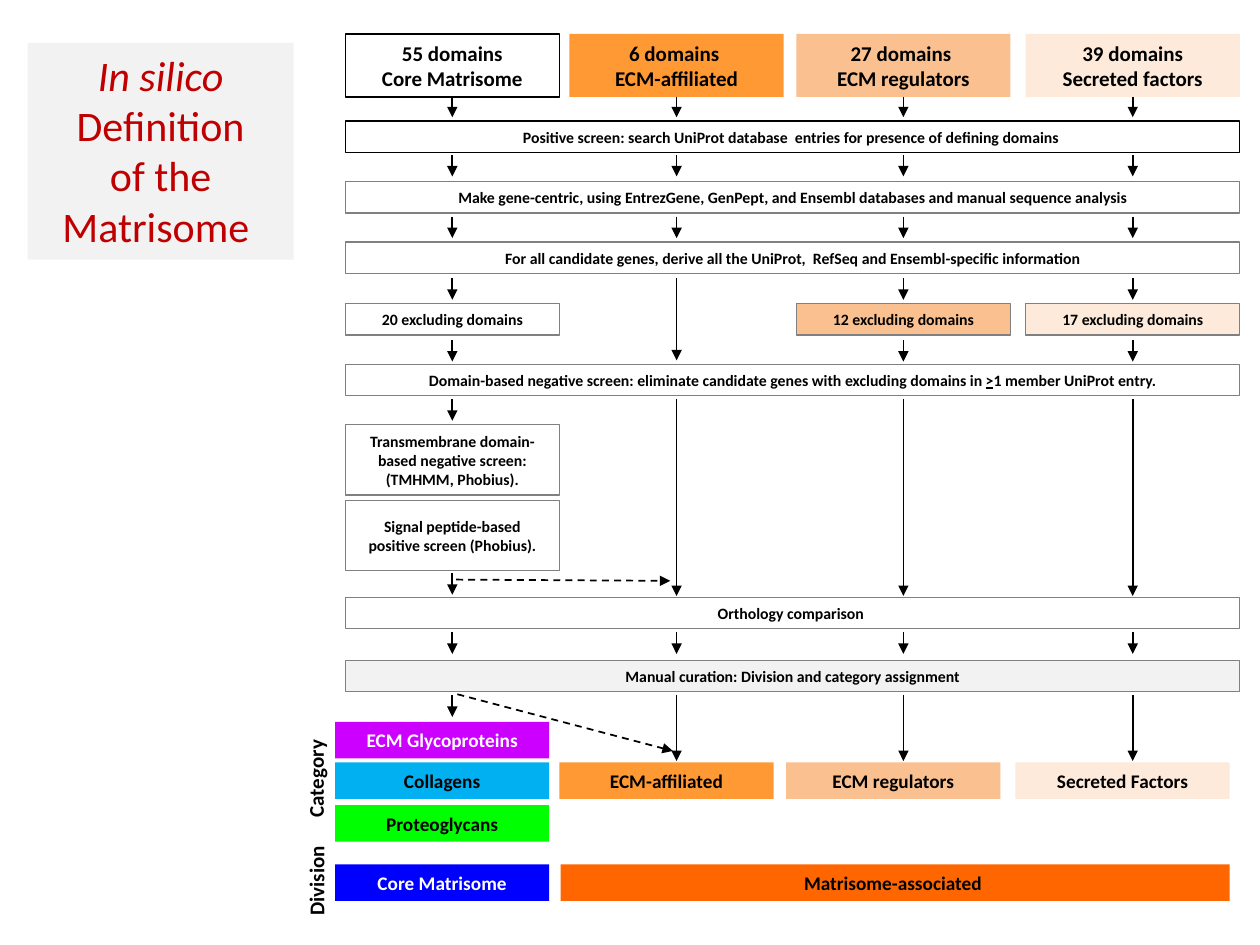
"""Build the flowchart slide that defines the matrisome in silico."""
import pptx
import pptx.dml.color
import pptx.enum.dml
import pptx.enum.shapes
import pptx.enum.text
import pptx.oxml.ns
import pptx.util
from lxml import etree
from pptx.util import Inches

COLORS = {
    "black": "000000", "white": "FFFFFF", "gray": "808080", "pale": "F2F2F2",
    "red": "C00000", "orange": "FF9933", "peach": "FAC090", "cream": "FDEADA",
    "deep orange": "FF6600", "blue": "0000FF", "purple": "CC00FF",
    "sky": "00B0F0", "green": "00FF00",
}
FONT = "Calibri"
COLUMNS = [2.74, 4.52, 6.32, 8.14]
COLUMN_WIDTH = 1.7
CENTERS = [left + COLUMN_WIDTH / 2 for left in COLUMNS]
FULL_WIDTH = 7.1
BAR_HEIGHT = 0.25
OUTCOME_LEFTS = [2.66, 4.44, 6.24, 8.06]
OUTCOME_HEIGHT = 0.29
SHORT_ARROW = 0.17

HEADERS = [
    ("55 domains\nCore Matrisome", "white", "black"),
    ("6 domains \nECM-affiliated", "orange", None),
    ("27 domains \nECM regulators", "peach", None),
    ("39 domains\nSecreted factors", "cream", None),
]
STEPS = [
    (0.96, "Positive screen: search UniProt database  entries for presence of defining domains ", "white", "black"),
    (1.44, "Make gene-centric, using EntrezGene, GenPept, and Ensembl databases and manual sequence analysis", "white", "gray"),
    (1.92, "For all candidate genes, derive all the UniProt,  RefSeq and Ensembl-specific information", "white", "gray"),
    (4.74, "Orthology comparison ", "white", "gray"),
    (5.24, "Manual curation: Division and category assignment", "pale", "gray"),
]
NEGATIVE_SCREEN = [
    "Domain-based negative screen: eliminate candidate genes with excluding domains in ",
    ">", "1 member UniProt entry.",
]
EXCLUSIONS = [(0, "20", "white"), (2, "12", "peach"), (3, "17", "cream")]
CORE_SCREENS = [
    (3.37, "Transmembrane domain-based negative screen: (TMHMM, Phobius)."),
    (3.97, "Signal peptide-based positive screen (Phobius)."),
]
OUTCOMES = [
    (0, 5.73, "ECM Glycoproteins", "purple", "white"),
    (0, 6.05, "Collagens", "sky", "black"),
    (0, 6.39, "Proteoglycans", "green", "black"),
    (1, 6.05, "ECM-affiliated", "orange", "black"),
    (2, 6.05, "ECM regulators", "peach", "black"),
    (3, 6.05, "Secreted Factors", "cream", "black"),
    (0, 6.86, "Core Matrisome", "blue", "white"),
]
SHORT_ARROWS = [
    (1.23, [0, 1, 2, 3]), (1.72, [0, 1, 2, 3]), (2.21, [0, 2, 3]),
    (2.7, [0, 2, 3]), (3.17, [0]), (4.55, [0]),
    (5.02, [0, 1, 2, 3]), (5.52, [0]),
]
LONG_ARROWS = [(2.21, 2.86, [1]), (3.17, 4.73, [1, 2, 3]), (5.52, 6.04, [1, 2, 3])]


def color(name):
    """Return the named colour."""
    return pptx.dml.color.RGBColor.from_string(COLORS[name])


def format_text(text_frame, size, font_color="black", bold=True):
    """Centre every paragraph and format its runs."""
    text_frame.word_wrap = True
    for paragraph in text_frame.paragraphs:
        paragraph.alignment = pptx.enum.text.PP_ALIGN.CENTER
        for run in paragraph.runs:
            run.font.name = FONT
            run.font.size = pptx.util.Pt(size)
            run.font.bold = bold
            run.font.color.rgb = color(font_color)


def add_box(slide, left, top, width, height, text, fill, line=None, size=9, font_color="black"):
    """Add a filled rectangle with centred bold text."""
    shape = slide.shapes.add_shape(
        pptx.enum.shapes.MSO_SHAPE.RECTANGLE,
        Inches(left), Inches(top), Inches(width), Inches(height))
    shape.shadow.inherit = False
    shape.fill.solid()
    shape.fill.fore_color.rgb = color(fill)
    if line:
        shape.line.color.rgb = color(line)
        shape.line.width = pptx.util.Pt(0.75)
    else:
        shape.line.fill.background()
    shape.text_frame.text = text
    shape.text_frame.vertical_anchor = pptx.enum.text.MSO_ANCHOR.MIDDLE
    format_text(shape.text_frame, size, font_color)
    return shape


def add_arrow(slide, start, end, dashed=False):
    """Add a straight arrow between two points."""
    connector = slide.shapes.add_connector(
        pptx.enum.shapes.MSO_CONNECTOR.STRAIGHT,
        *[Inches(value) for value in (*start, *end)])
    connector.line.color.rgb = color("black")
    connector.line.width = pptx.util.Pt(1)
    if dashed:
        connector.line.dash_style = pptx.enum.dml.MSO_LINE.DASH
    line = connector.line._get_or_add_ln()
    etree.SubElement(line, pptx.oxml.ns.qn("a:tailEnd"), type="triangle")
    etree.SubElement(connector._element.spPr, pptx.oxml.ns.qn("a:effectLst"))
    return connector


def add_side_label(slide, left, top, width, text):
    """Add a row label that reads upwards."""
    label = slide.shapes.add_textbox(Inches(left), Inches(top), Inches(width), Inches(0.3))
    label.rotation = 270
    label.text_frame.text = text
    format_text(label.text_frame, 12)
    label.text_frame.word_wrap = False


def format_title(slide):
    """Place and format the slide title."""
    title = slide.shapes.title
    title.left, title.top = Inches(0.22), Inches(0.34)
    title.width, title.height = Inches(2.11), Inches(1.72)
    title.fill.solid()
    title.fill.fore_color.rgb = color("pale")
    text_frame = title.text_frame
    text_frame.text = "In silico\nDefinition\nof the\nMatrisome "
    text_frame.auto_size = pptx.enum.text.MSO_AUTO_SIZE.NONE
    text_frame.vertical_anchor = pptx.enum.text.MSO_ANCHOR.TOP
    format_text(text_frame, 24, "red", bold=False)
    text_frame.paragraphs[0].runs[0].font.italic = True


def add_negative_screen(slide):
    """Add the screen step whose comparison sign is underlined."""
    shape = add_box(slide, COLUMNS[0], 2.89, FULL_WIDTH, BAR_HEIGHT, "", "white", "gray")
    paragraph = shape.text_frame.paragraphs[0]
    for text in NEGATIVE_SCREEN:
        run = paragraph.add_run()
        run.text = text
        run.font.underline = text == ">"
    format_text(shape.text_frame, 9)


def add_boxes(slide):
    """Add the screening steps and the resulting categories."""
    for top, text, fill, line in STEPS:
        add_box(slide, COLUMNS[0], top, FULL_WIDTH, BAR_HEIGHT, text, fill, line)
    add_negative_screen(slide)
    for column, count, fill in EXCLUSIONS:
        add_box(slide, COLUMNS[column], 2.41, COLUMN_WIDTH, BAR_HEIGHT,
                f"{count} excluding domains", fill, "gray")
    for top, text in CORE_SCREENS:
        add_box(slide, COLUMNS[0], top, COLUMN_WIDTH, 0.56, text, "white", "gray")
    for column, top, text, fill, font_color in OUTCOMES:
        add_box(slide, OUTCOME_LEFTS[column], top, COLUMN_WIDTH, OUTCOME_HEIGHT,
                text, fill, size=11, font_color=font_color)
    add_box(slide, 4.45, 6.86, 5.31, OUTCOME_HEIGHT, "Matrisome-associated ", "deep orange", size=11)


def add_arrows(slide):
    """Add the arrows that lead from step to step."""
    short = [(top, top + SHORT_ARROW, columns) for top, columns in SHORT_ARROWS]
    for top, bottom, columns in short + LONG_ARROWS:
        for column in columns:
            add_arrow(slide, (CENTERS[column], top), (CENTERS[column], bottom))
    add_arrow(slide, (3.62, 4.6), (5.32, 4.61), dashed=True)
    add_arrow(slide, (3.63, 5.51), (5.34, 5.96), dashed=True)


def main():
    """Build and save the presentation."""
    presentation = pptx.Presentation()
    presentation.slide_width, presentation.slide_height = Inches(10), Inches(7.5)
    slide = presentation.slides.add_slide(presentation.slide_layouts[5])
    format_title(slide)
    add_side_label(slide, 2.13, 6.84, 0.76, "Division")
    add_side_label(slide, 2.07, 6.03, 0.87, "Category")
    add_boxes(slide)
    for left, center, (text, fill, line) in zip(COLUMNS, CENTERS, HEADERS):
        header = add_box(slide, left, 0.27, COLUMN_WIDTH, 0.5, text, fill, line, size=12)
        add_arrow(slide, (center, 0.77), (center, 0.93)).begin_connect(header, 2)
    add_arrows(slide)
    presentation.save("out.pptx")


if __name__ == "__main__":
    main()
